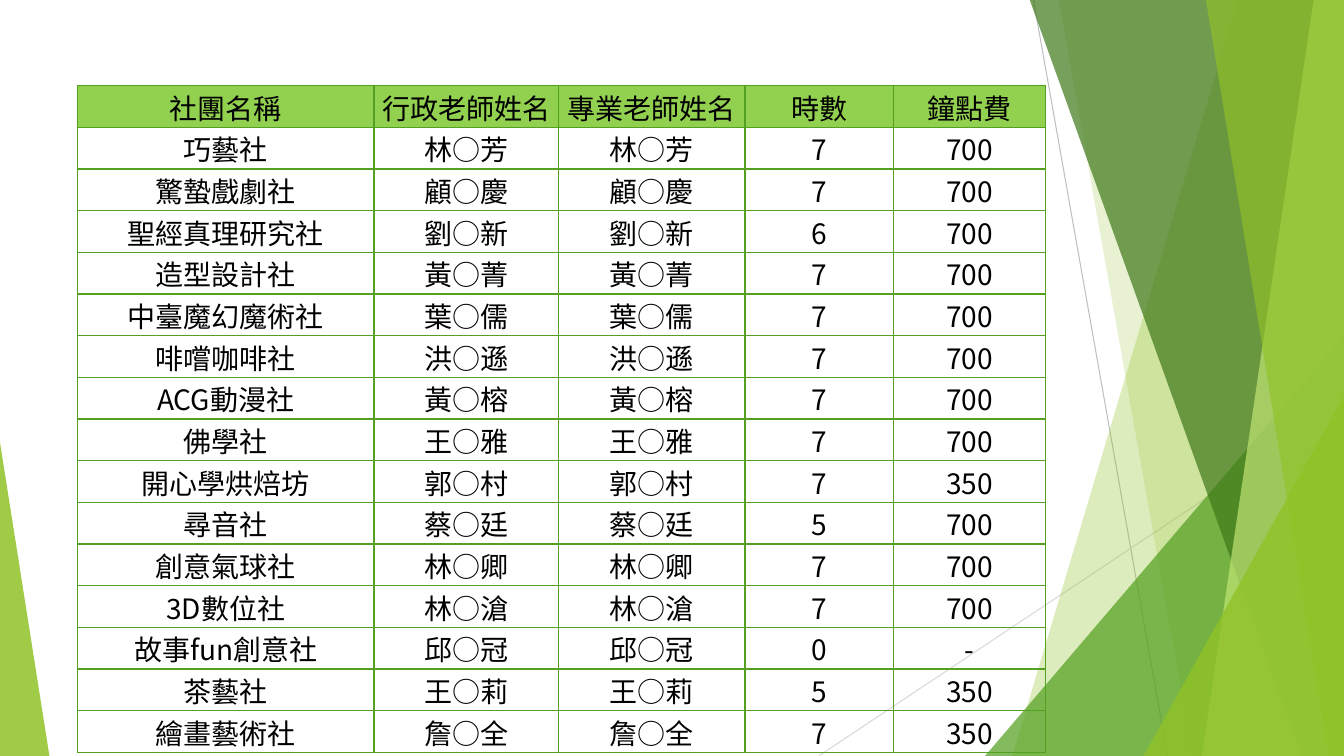
import dataclasses
import typing

import pptx
import pptx.dml.color
import pptx.enum.shapes
import pptx.enum.text
import pptx.oxml
import pptx.oxml.ns
import pptx.slide
import pptx.util

Inches = pptx.util.Inches
qn = pptx.oxml.ns.qn


@dataclasses.dataclass(frozen=True)
class Theme:
    font: str = "Noto Sans CJK SC"
    size: float = 20
    ink: str = "000000"
    head: str = "92D050"
    rule: str = "54A021"
    lime: str = "90C226"
    leaf: str = "54A021"
    pine: str = "3F7819"
    pale: str = "C0E474"
    grey: str = "BFBFBF"
    mist: str = "D9D9D9"
    thin: float = 0.75
    grid: float = 1


@dataclasses.dataclass(frozen=True)
class Ray:
    start: tuple[float, float]
    end: tuple[float, float]
    color: str


@dataclasses.dataclass(frozen=True)
class Pane:
    """A band from a slanted left side to the right edge of the slide."""
    top: float
    foot: float
    color: str
    alpha: int


@dataclasses.dataclass(frozen=True)
class Peak:
    """A triangle standing on the foot of the slide."""
    left: float
    top: float
    width: float
    apex: float
    color: str
    alpha: int


class Club(typing.NamedTuple):
    name: str
    staff: str
    hours: str
    fee: str


THEME = Theme()
WIDE, HIGH, BLEED = 13.33, 7.5, -0.01

RAYS = [
    Ray((10.25, 0), (11.58, HIGH), THEME.grey),
    Ray((WIDE, 4.03), (8.12, HIGH), THEME.mist),
]
# Back to front
FACETS = [
    Pane(12.28, 10.04, THEME.lime, 30),
    Pane(10.5, 11.83, THEME.lime, 20),
    Peak(9.77, 3.33, 3.56, 1, THEME.leaf, 72),
    Pane(10.21, 12.91, THEME.pine, 70),
    Pane(13.03, 11.92, THEME.pale, 70),
    Pane(11.96, 13.18, THEME.lime, 65),
    Peak(11.34, 3.93, 1.99, 1, THEME.lime, 80),
    Peak(0, 4.39, 0.49, 0, THEME.lime, 85),
]

HEADS = ["社團名稱", "行政老師姓名", "專業老師姓名", "時數", "鐘點費"]
WIDTHS = [2.94, 1.83, 1.85, 1.47, 1.51]
LEFT, TOP, ROW = 0.77, 0.85, 0.41
CLUBS = [
    Club("巧藝社", "林○芳", "7", "700"),
    Club("驚蟄戲劇社", "顧○慶", "7", "700"),
    Club("聖經真理研究社", "劉○新", "6", "700"),
    Club("造型設計社", "黃○菁", "7", "700"),
    Club("中臺魔幻魔術社", "葉○儒", "7", "700"),
    Club("啡嚐咖啡社", "洪○遜", "7", "700"),
    Club("ACG動漫社", "黃○榕", "7", "700"),
    Club("佛學社", "王○雅", "7", "700"),
    Club("開心學烘焙坊", "郭○村", "7", "350"),
    Club("尋音社", "蔡○廷", "5", "700"),
    Club("創意氣球社", "林○卿", "7", "700"),
    Club("3D數位社", "林○滄", "7", "700"),
    Club("故事fun創意社", "邱○冠", "0", "-"),
    Club("茶藝社", "王○莉", "5", "350"),
    Club("繪畫藝術社", "詹○全", "7", "350"),
]

CELL = {
    "margin_left": Inches(0.01),
    "margin_right": Inches(0.01),
    "margin_top": Inches(0.01),
    "margin_bottom": Inches(0),
    "vertical_anchor": pptx.enum.text.MSO_ANCHOR.MIDDLE,
}
FONT = {"name": THEME.font, "size": pptx.util.Pt(THEME.size), "bold": False}


def set_all(target: typing.Any, values: dict[str, typing.Any]) -> None:
    for name, value in values.items():
        setattr(target, name, value)


def rgb(color: str) -> pptx.dml.color.RGBColor:
    return pptx.dml.color.RGBColor.from_string(color)


def add_ray(slide: pptx.slide.Slide, ray: Ray) -> None:
    ends = [Inches(n) for n in (*ray.start, *ray.end)]
    line = slide.shapes.add_connector(pptx.enum.shapes.MSO_CONNECTOR.STRAIGHT, *ends)
    line.line.color.rgb = rgb(ray.color)
    line.line.width = pptx.util.Pt(THEME.thin)
    pptx.oxml.ns.qn("a:effectLst")
    line.element.spPr.append(pptx.oxml.parse_xml(
        f'<a:effectLst {pptx.oxml.ns.nsdecls("a")}/>'))


def add_facet(slide: pptx.slide.Slide, facet: Pane | Peak) -> None:
    if isinstance(facet, Pane):
        points = [(facet.top, BLEED), (WIDE, BLEED), (WIDE, HIGH), (facet.foot, HIGH)]
        first, *rest = [(Inches(x), Inches(y)) for x, y in points]
        path = slide.shapes.build_freeform(*first)
        path.add_line_segments(rest, close=True)
        shape = path.convert_to_shape()
    else:
        box = (facet.left, facet.top, facet.width, HIGH - facet.top)
        shape = slide.shapes.add_shape(
            pptx.enum.shapes.MSO_SHAPE.ISOSCELES_TRIANGLE, *map(Inches, box))
        shape.adjustments[0] = facet.apex
    shape.shadow.inherit = False
    shape.line.fill.background()
    shape.fill.solid()
    shape.fill.fore_color.rgb = rgb(facet.color)
    tint = shape.element.spPr.find(f'{qn("a:solidFill")}/{qn("a:srgbClr")}')
    tint.append(pptx.oxml.parse_xml(
        f'<a:alpha {pptx.oxml.ns.nsdecls("a")} val="{facet.alpha * 1000}"/>'))


def fill_cell(cell: typing.Any, text: str, head: bool) -> None:
    set_all(cell, CELL)
    # Borders come before the fill
    for side in "LRTB":
        cell._tc.get_or_add_tcPr().append(pptx.oxml.parse_xml(
            f'<a:ln{side} {pptx.oxml.ns.nsdecls("a")} w="{pptx.util.Pt(THEME.grid)}">'
            f'<a:solidFill><a:srgbClr val="{THEME.rule}"/></a:solidFill></a:ln{side}>'))
    if head:
        cell.fill.solid()
        cell.fill.fore_color.rgb = rgb(THEME.head)
    else:
        cell.fill.background()
    para = cell.text_frame.paragraphs[0]
    para.alignment = pptx.enum.text.PP_ALIGN.CENTER
    run = para.add_run()
    run.text = text
    set_all(run.font, FONT)
    run.font.color.rgb = rgb(THEME.ink)
    run.font._element.append(pptx.oxml.parse_xml(
        f'<a:ea {pptx.oxml.ns.nsdecls("a")} typeface="{THEME.font}"/>'))


def add_clubs(slide: pptx.slide.Slide) -> None:
    # Each teacher fills both staff columns
    rows = [HEADS] + [[c.name, c.staff, c.staff, c.hours, c.fee] for c in CLUBS]
    box = (LEFT, TOP, sum(WIDTHS), ROW * len(rows))
    table = slide.shapes.add_table(len(rows), len(HEADS), *map(Inches, box)).table
    set_all(table, {"first_row": False, "horz_banding": False})
    for col, width in zip(table.columns, WIDTHS):
        col.width = Inches(width)
    for r, row in enumerate(rows):
        table.rows[r].height = Inches(ROW)
        for c, text in enumerate(row):
            fill_cell(table.cell(r, c), text, r == 0)


def main() -> None:
    deck = pptx.Presentation()
    set_all(deck, {"slide_width": Inches(WIDE), "slide_height": Inches(HIGH)})
    slide = deck.slides.add_slide(deck.slide_layouts[6])
    # Backdrop
    for ray in RAYS:
        add_ray(slide, ray)
    for facet in FACETS:
        add_facet(slide, facet)
    # Club table
    add_clubs(slide)
    deck.save("out.pptx")


if __name__ == "__main__":
    main()
